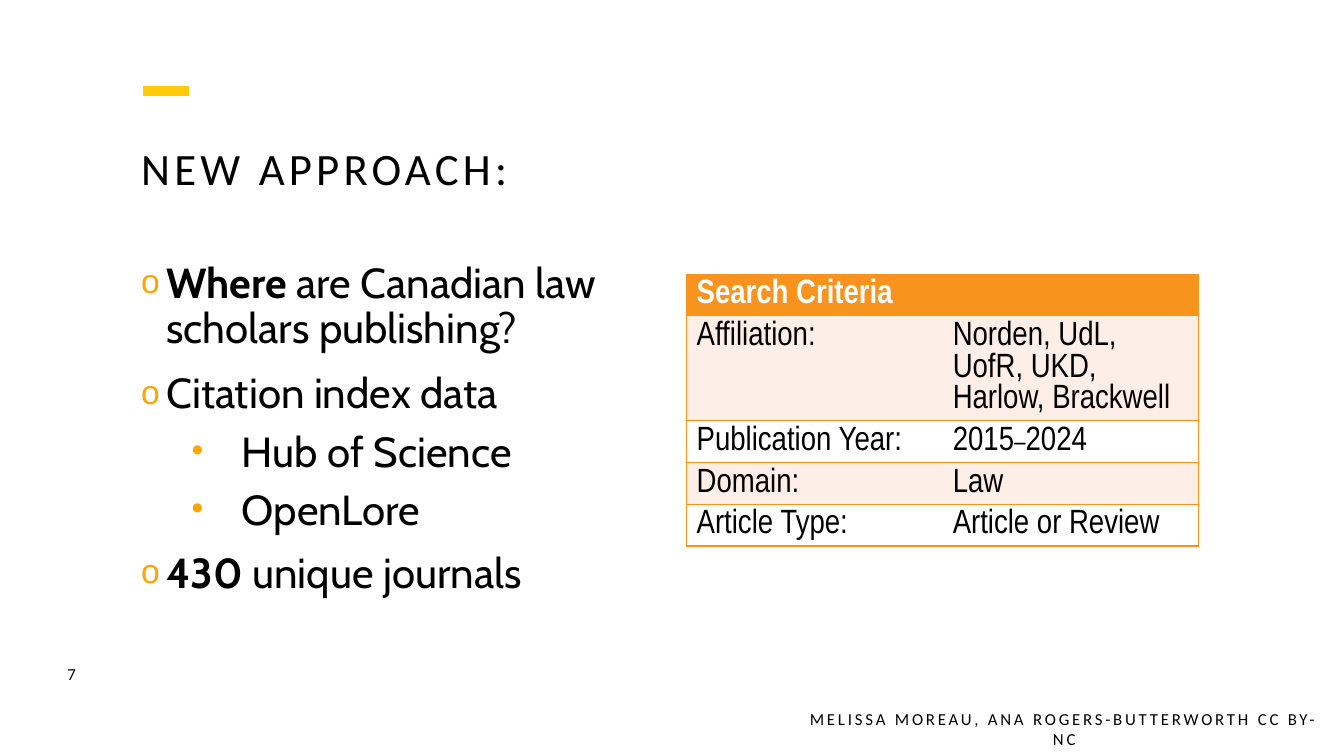
from dataclasses import dataclass

import pptx
import pptx.dml.color
import pptx.enum.shapes
import pptx.enum.text
import pptx.oxml
import pptx.oxml.ns
import pptx.util
from pptx.util import Inches

ALIGN = pptx.enum.text.PP_ALIGN
ANCHOR = pptx.enum.text.MSO_ANCHOR


@dataclass(frozen=True)
class Theme:
    text: str = "000000"
    white: str = "FFFFFF"
    accent: str = "FFCA08"
    bullet: str = "FFA500"
    table: str = "F8931D"
    band: str = "FEEEE8"
    heading_font: str = "Calibri"
    body_font: str = "Cabin"
    table_font: str = "Arial Narrow"
    title_size: int = 32
    body_size: int = 30
    table_size: int = 24
    dash_size: int = 18
    small_size: int = 12


@dataclass(frozen=True)
class Box:
    left: float
    top: float
    width: float
    height: float

    def lengths(self) -> tuple:
        return tuple(Inches(n) for n in (self.left, self.top, self.width, self.height))


@dataclass(frozen=True)
class Label:
    text: str
    box: Box


@dataclass(frozen=True)
class Bullet:
    text: str
    bold: str = ""
    level: int = 0


@dataclass(frozen=True)
class BulletStyle:
    mark: str
    indent: float
    hanging: float
    line_spacing: float


THEME = Theme()
TITLE = Label("NEW APPROACH:", Box(1.4, 1.2, 10.74, 1))
SMALL_LABELS = [
    Label("7", Box(0.46, 6.58, 0.5, 0.2)),
    Label("MELISSA MOREAU, ANA ROGERS-BUTTERWORTH CC BY-NC", Box(7.94, 7.09, 5.23, 0.28)),
]
BODY_BOX = Box(1.4, 2.6, 5, 3.75)
BULLETS = [
    Bullet(" are Canadian law scholars publishing?", bold="Where"),
    Bullet("Citation index data"),
    Bullet("Hub of Science", level=1),
    Bullet("OpenLore", level=1),
    Bullet(" unique journals", bold="430"),
]
BULLET_STYLES = [BulletStyle("o", 0.25, 0.25, 0.9), BulletStyle("•", 1, 0.5, 0.75)]
TABLE_BOX = Box(6.81, 2.72, 5.08, 2.05)
CRITERIA = [
    ("Search Criteria", ""),
    ("Affiliation:", "Norden, UdL, UofR, UKD, Harlow, Brackwell"),
    ("Publication Year:", "2015–2024"),
    ("Domain:", "Law"),
    ("Article Type:", "Article or Review"),
]


def rgb(color: str) -> pptx.dml.color.RGBColor:
    return pptx.dml.color.RGBColor.from_string(color)


def format_run(run, font: str, size: int, color: str = THEME.text,
               bold: bool = False, spacing: int = 0) -> None:
    run.font.name = font
    run.font.size = pptx.util.Pt(size)
    run.font.color.rgb = rgb(color)
    run.font.bold = bold
    if spacing:
        run.font._element.set("spc", str(spacing * 100))


def prepare_frame(shape, box: Box, anchor):
    """Place the shape and return its text frame, wrapped and without insets."""
    shape.left, shape.top, shape.width, shape.height = box.lengths()
    frame = shape.text_frame
    frame.word_wrap = True
    frame.auto_size = pptx.enum.text.MSO_AUTO_SIZE.NONE
    frame.vertical_anchor = anchor
    frame.margin_left = frame.margin_top = frame.margin_right = frame.margin_bottom = 0
    return frame


def fill_label(shape, label: Label, size: int, spacing: int, align) -> None:
    frame = prepare_frame(shape, label.box, ANCHOR.MIDDLE)
    frame.text = label.text
    paragraph = frame.paragraphs[0]
    paragraph.alignment = align
    paragraph.line_spacing = 0.9 if size == THEME.title_size else 1.0
    format_run(paragraph.runs[0], THEME.heading_font, size, spacing=spacing)


def add_child(parent, tag: str, **attributes: str):
    child = pptx.oxml.parse_xml(f"<a:{tag} {pptx.oxml.ns.nsdecls('a')}/>")
    for name, value in attributes.items():
        child.set(name, value)
    parent.append(child)
    return child


def set_bullet(paragraph, style: BulletStyle) -> None:
    properties = paragraph._p.get_or_add_pPr()
    properties.set("marL", str(Inches(style.indent)))
    properties.set("indent", str(Inches(-style.hanging)))
    add_child(add_child(properties, "buClr"), "srgbClr", val=THEME.bullet)
    add_child(properties, "buSzPct", val="80000")
    add_child(properties, "buFont", typeface="Arial")
    add_child(properties, "buChar", char=style.mark)


def fill_bullets(shape) -> None:
    frame = prepare_frame(shape, BODY_BOX, ANCHOR.TOP)
    frame.text = "\n".join(bullet.bold or bullet.text for bullet in BULLETS)
    for paragraph, bullet in zip(frame.paragraphs, BULLETS):
        style = BULLET_STYLES[bullet.level]
        paragraph.level = bullet.level
        paragraph.line_spacing = style.line_spacing
        paragraph.space_before = pptx.util.Pt(14)
        paragraph.space_after = pptx.util.Pt(0)
        set_bullet(paragraph, style)
        if bullet.bold:
            paragraph.add_run().text = bullet.text
        for run in paragraph.runs:
            format_run(run, THEME.body_font, THEME.body_size, bold=run.text == bullet.bold)


def set_borders(cell, hidden_side: str) -> None:
    """Rule every side of the cell except the hidden one."""
    properties = cell._tc.get_or_add_tcPr()
    for position, side in enumerate(("lnL", "lnR", "lnT", "lnB")):
        line = pptx.oxml.parse_xml(f"<a:{side} {pptx.oxml.ns.nsdecls('a')} w='12700'/>")
        if side == hidden_side:
            add_child(line, "noFill")
        else:
            add_child(add_child(line, "solidFill"), "srgbClr", val=THEME.table)
        properties.insert(position, line)


def add_criteria_table(slide) -> None:
    table = slide.shapes.add_table(len(CRITERIA), 2, *TABLE_BOX.lengths()).table
    for row_index, texts in enumerate(CRITERIA):
        header = row_index == 0
        fill = THEME.table if header else (THEME.white, THEME.band)[row_index % 2]
        for column_index, text in enumerate(texts):
            cell = table.cell(row_index, column_index)
            cell.fill.solid()
            cell.fill.fore_color.rgb = rgb(fill)
            set_borders(cell, "lnL" if column_index else "lnR")
            paragraph = cell.text_frame.paragraphs[0]
            start, dash, end = text.partition("–")
            for part in filter(None, (start, dash, end)):
                run = paragraph.add_run()
                run.text = part
                format_run(run, THEME.table_font,
                           THEME.dash_size if part == "–" else THEME.table_size,
                           THEME.white if header else THEME.text, header)
    table.cell(0, 0).merge(table.cell(0, 1))


def add_accent_line(slide) -> None:
    line = slide.shapes.add_connector(
        pptx.enum.shapes.MSO_CONNECTOR.STRAIGHT,
        Inches(1.42), Inches(0.9), Inches(1.87), Inches(0.9))
    line.line.color.rgb = rgb(THEME.accent)
    line.line.width = pptx.util.Pt(7)
    add_child(line._element.spPr, "effectLst")


def main() -> None:
    presentation = pptx.Presentation()
    presentation.slide_width = Inches(13.33)
    presentation.slide_height = Inches(7.5)
    slide = presentation.slides.add_slide(presentation.slide_layouts[1])
    add_accent_line(slide)
    fill_label(slide.shapes.title, TITLE, THEME.title_size, 3, ALIGN.LEFT)
    fill_bullets(slide.placeholders[1])
    add_criteria_table(slide)
    for label in SMALL_LABELS:
        text_box = slide.shapes.add_textbox(*label.box.lengths())
        fill_label(text_box, label, THEME.small_size, 2, ALIGN.CENTER)
    presentation.save("out.pptx")


if __name__ == "__main__":
    main()
